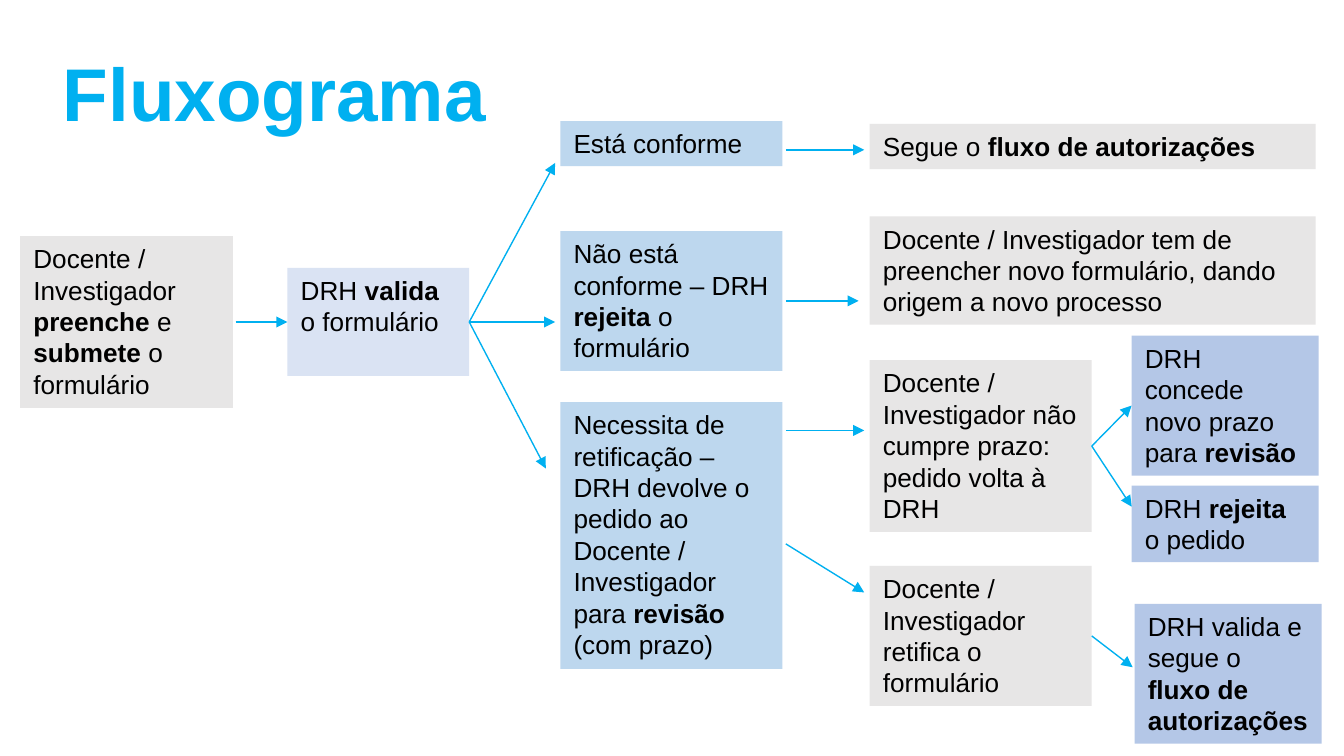
from lxml import etree
from pptx import Presentation
from pptx.dml.color import RGBColor
from pptx.enum.shapes import MSO_CONNECTOR, MSO_SHAPE
from pptx.enum.text import MSO_ANCHOR, PP_ALIGN
from pptx.oxml.ns import qn
from pptx.util import Pt

RECT, LINE = MSO_SHAPE.RECTANGLE, MSO_CONNECTOR.STRAIGHT
TOP, LEFT_ALIGN = MSO_ANCHOR.TOP, PP_ALIGN.LEFT
LEFT, RIGHT = 1, 3
FONT, ACCENT = "Arial", "00B0F0"
GREY, PALE, LIGHT, MID = "E7E6E6", "DAE3F3", "BDD7EE", "B4C7E7"

TITLE = "Fluxograma"
# Column: left, width
COLUMNS = {
    "submit": (10.8, 114),
    "validate": (154, 97.4),
    "result": (300.2, 119),
    "action": (465.9, 119),
    "wide": (465.9, 239),
    "end": (606.2, 100.2),
    "last": (607.8, 100.2),
}
# Name: column, top, height, fill, runs as (text, bold)
BOXES = {
    "submit": ("submit", 126.5, 92, GREY, [
        ("Docente / Investigador ", False), ("preenche", True), (" e ", False),
        ("submete ", True), ("o formulário", False)]),
    "validate": ("validate", 143.5, 58, PALE, [
        ("DRH ", False), ("valida", True), (" o formulário", False)]),
    "conforms": ("result", 64.9, 24.2, LIGHT, [("Está conforme", False)]),
    "rejected": ("result", 123.8, 75, LIGHT, [
        ("Não está conforme – DRH ", False), ("rejeita ", True), ("o formulário", False)]),
    "returned": ("result", 215.4, 143, LIGHT, [
        ("Necessita de retificação – DRH devolve o pedido ao Docente / Investigador para ", False),
        ("revisão ", True), ("(com prazo)", False)]),
    "authorise": ("wide", 66.4, 24.2, GREY, [
        ("Segue o ", False), ("fluxo de autorizações", True)]),
    "new form": ("wide", 116, 58, GREY, [
        ("Docente / Investigador tem de preencher novo formulário, "
         "dando origem a novo processo", False)]),
    "late": ("action", 193, 92, GREY, [
        ("Docente / Investigador não cumpre prazo: pedido volta à DRH", False)]),
    "corrects": ("action", 303.2, 75, GREY, [
        ("Docente / Investigador retifica o formulário", False)]),
    "extended": ("end", 179.8, 75, MID, [
        ("DRH concede novo prazo para ", False), ("revisão", True)]),
    "refused": ("end", 260.2, 41, MID, [
        ("DRH ", False), ("rejeita ", True), ("o pedido", False)]),
    "approved": ("last", 323.5, 75, MID, [
        ("DRH valida e segue o ", False), ("fluxo de autorizações", True)]),
}
# Each end is a box name, joined at its side, or a free point
ARROWS = [
    ((126.3, 172.5), "validate"),
    ("validate", (297.4, 87.3)),
    ("validate", (297.4, 172.5)),
    ("validate", (292.4, 251)),
    ((421, 80.3), (463, 80.3)),
    ((421, 161.2), (460, 161.2)),
    ((421, 230.6), (463, 230.6)),
    ((421, 291.4), (463, 317.4)),
    ("late", "extended"),
    ("late", (606.3, 271.5)),
    ("corrects", (606.8, 357.5)),
]


def rgb(value):
    """Turn a hex string into a colour."""
    return RGBColor.from_string(value)


def write(sp, runs, size, color):
    """Write one left-aligned paragraph of runs into a shape."""
    tf = sp.text_frame
    tf.word_wrap = True
    tf.vertical_anchor = TOP
    p = tf.paragraphs[0]
    p.alignment = LEFT_ALIGN
    p.font.name, p.font.size = FONT, Pt(size)
    p.font.color.rgb = rgb(color)
    for text, bold in runs:
        r = p.add_run()
        r.text = text
        r.font.bold = bold


def add_box(s, column, top, height, fill, runs):
    """Add a filled box in its column."""
    left, width = COLUMNS[column]
    sp = s.shapes.add_shape(RECT, Pt(left), Pt(top), Pt(width), Pt(height))
    sp.shadow.inherit = False
    sp.fill.solid()
    sp.fill.fore_color.rgb = rgb(fill)
    sp.line.fill.background()
    write(sp, runs, 14, "000000")
    return sp


def add_arrow(s, boxes, start, end):
    """Add an arrow between boxes or free points."""
    cxn = s.shapes.add_connector(LINE, 0, 0, 0, 0)
    if start in boxes:
        cxn.begin_connect(boxes[start], RIGHT)
    else:
        cxn.begin_x, cxn.begin_y = map(Pt, start)
    if end in boxes:
        cxn.end_connect(boxes[end], LEFT)
    else:
        cxn.end_x, cxn.end_y = map(Pt, end)
    cxn.line.color.rgb = rgb(ACCENT)
    cxn.line.width = Pt(0.75)
    etree.SubElement(cxn.line._get_or_add_ln(), qn("a:tailEnd"), type="triangle")
    etree.SubElement(cxn._element.spPr, qn("a:effectLst"))


def main():
    """Build the flowchart slide."""
    prs = Presentation()
    prs.slide_width, prs.slide_height = Pt(720), Pt(405)
    s = prs.slides.add_slide(prs.slide_layouts[6])
    boxes = {name: add_box(s, *box) for name, box in BOXES.items()}
    for start, end in ARROWS:
        add_arrow(s, boxes, start, end)
    title = s.shapes.add_textbox(Pt(26.6), Pt(21.6), Pt(261.4), Pt(55.4))
    write(title, [(TITLE, True)], 40, ACCENT)
    prs.save("out.pptx")


if __name__ == "__main__":
    main()
